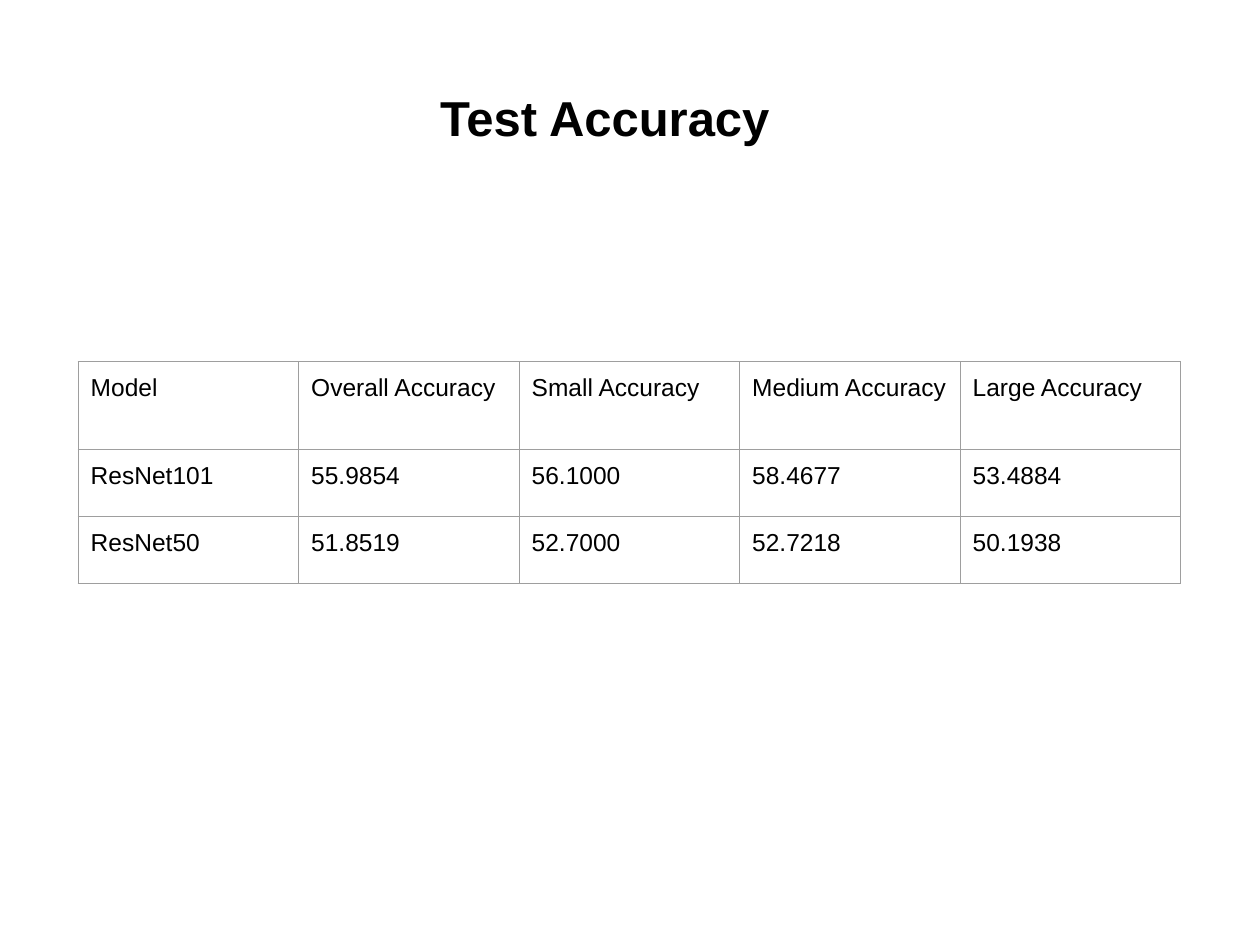
from lxml import etree
from pptx import Presentation
from pptx.dml import color
from pptx.enum import text
from pptx.oxml import ns
from pptx.util import Inches, Pt

ACCURACIES = [
    ["Model", "Overall Accuracy", "Small Accuracy", "Medium Accuracy", "Large Accuracy"],
    ["ResNet101", "55.9854", "56.1000", "58.4677", "53.4884"],
    ["ResNet50", "51.8519", "52.7000", "52.7218", "50.1938"],
]


def rgb(value):
    return color.RGBColor.from_string(value)


def set_all(target, values):
    for key, value in values.items():
        setattr(target, key, value)


class SlideBuilder:
    font_name = "Arial"
    ink = "000000"
    grid = "9E9E9E"
    inset = Inches(0.1)

    def __init__(self, slide):
        self.slide = slide

    def style(self, paragraph, size, bold=False):
        set_all(paragraph.font, {"name": self.font_name, "size": Pt(size), "bold": bold})
        paragraph.font.color.rgb = rgb(self.ink)

    def margins(self, target):
        sides = ("left", "right", "top", "bottom")
        set_all(target, {f"margin_{side}": self.inset for side in sides})

    def title(self, wording, left, top, width, height):
        box = self.slide.shapes.add_textbox(
            Inches(left), Inches(top), Inches(width), Inches(height))
        frame = box.text_frame
        self.margins(frame)
        set_all(frame, {"word_wrap": True, "vertical_anchor": text.MSO_ANCHOR.TOP,
                        "margin_right": Inches(0.5)})
        heading = frame.paragraphs[0]
        set_all(heading, {"text": wording, "alignment": text.PP_ALIGN.CENTER,
                          "line_spacing": 0.9})
        self.style(heading, 28, bold=True)

    def borders(self, cell):
        """Draw the four cell borders, which must precede the fill in the XML."""
        properties = cell._tc.get_or_add_tcPr()
        for index, side in enumerate(("lnL", "lnR", "lnT", "lnB")):
            line = etree.Element(ns.qn(f"a:{side}"), w=str(Pt(0.75)))
            fill = etree.SubElement(line, ns.qn("a:solidFill"))
            etree.SubElement(fill, ns.qn("a:srgbClr"), val=self.grid)
            properties.insert(index, line)

    def table(self, rows, left, top, column_width, row_heights):
        columns = len(rows[0])
        table = self.slide.shapes.add_table(
            len(rows), columns, Inches(left), Inches(top),
            Inches(column_width * columns), Inches(sum(row_heights))).table
        set_all(table, {"first_row": False, "horz_banding": False})
        for column in table.columns:
            column.width = Inches(column_width)
        for row, height, values in zip(table.rows, row_heights, rows):
            row.height = Inches(height)
            for cell, value in zip(row.cells, values):
                cell.text = value
                self.margins(cell)
                cell.fill.background()
                self.borders(cell)
                self.style(cell.text_frame.paragraphs[0], 14)


def main():
    deck = Presentation()
    set_all(deck, {"slide_width": Inches(10), "slide_height": Inches(7.5)})
    builder = SlideBuilder(deck.slides.add_slide(deck.slide_layouts[6]))
    builder.title("Test Accuracy", 0.34, 0.65, 9.32, 0.83)
    builder.table(ACCURACIES, 0.62, 2.87, 1.75, [0.7, 0.53, 0.53])
    deck.save("out.pptx")


if __name__ == "__main__":
    main()
